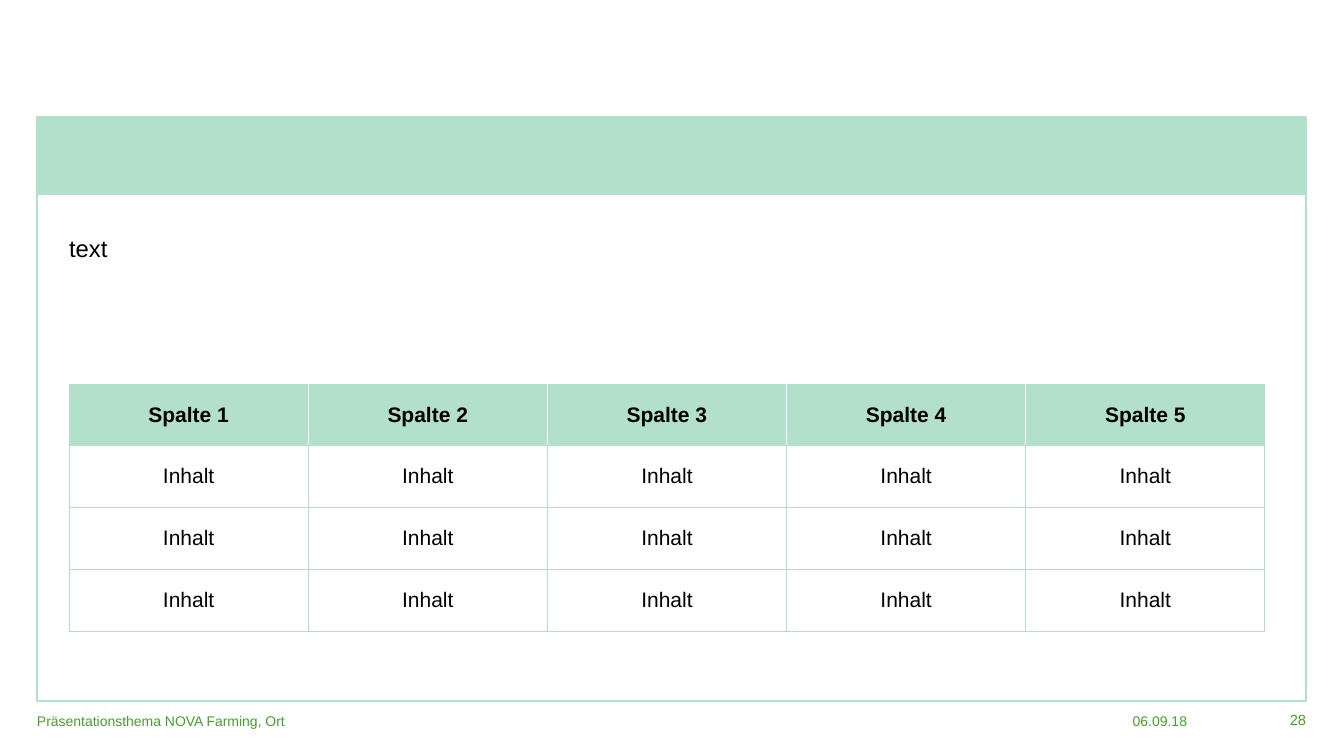
from lxml import etree
from pptx import Presentation
from pptx import util as u
from pptx.dml.color import RGBColor
from pptx.enum import shapes, text
from pptx.oxml import ns

SCALE = 12192000 / 1344
HUES = {"mint": "B3E0CB", "green": "44A12C", "black": "000000", "white": "FFFFFF"}
HEAD = [f"Spalte {n}" for n in range(1, 6)]
ROWS = [HEAD] + [["Inhalt"] * len(HEAD)] * 3
LEFT, RIGHT = text.PP_ALIGN.LEFT, text.PP_ALIGN.RIGHT


def px(n):
    return u.Emu(round(n * SCALE))


def hue(name):
    return RGBColor.from_string(HUES[name])


def style(par, size, color, align=LEFT, bold=False):
    par.alignment = align
    font = par.font
    font.name, font.size, font.bold = "Arial", u.Pt(size), bold
    font.color.rgb = hue(color)


def panel(slide, box, fill, line=None):
    shape = slide.shapes.add_shape(shapes.MSO_SHAPE.RECTANGLE, *map(px, box))
    shape.shadow.inherit = False
    shape.fill.solid()
    shape.fill.fore_color.rgb = hue(fill)
    if line:
        shape.line.color.rgb = hue(line)
        shape.line.width = u.Pt(1)
    else:
        shape.line.fill.background()


def inset(frame):
    frame.margin_left = frame.margin_right = 0
    frame.margin_top = frame.margin_bottom = 0


def label(slide, box, words, size, align=LEFT):
    frame = slide.shapes.add_textbox(*map(px, box)).text_frame
    frame.word_wrap = True
    inset(frame)
    frame.vertical_anchor = text.MSO_ANCHOR.MIDDLE
    frame.text = words
    style(frame.paragraphs[0], size, "green", align)


def body(slide, box, words):
    hold = slide.placeholders[1]
    hold.left, hold.top, hold.width, hold.height = map(px, box)
    # Bring the text in front of the panels
    hold.element.getparent().append(hold.element)
    frame = hold.text_frame
    inset(frame)
    frame.text = words
    par = frame.paragraphs[0]
    props = par._p.get_or_add_pPr()
    props.set("marL", "0")
    props.set("indent", "0")
    etree.SubElement(props, ns.qn("a:buNone"))
    par.line_spacing = 0.9
    par.space_before = u.Pt(0)
    style(par, 17, "black")


def edge(cell, side, color):
    line = etree.SubElement(cell._tc.get_or_add_tcPr(), ns.qn(f"a:ln{side}"), w=str(u.Pt(0.75)))
    fill = etree.SubElement(line, ns.qn("a:solidFill"))
    etree.SubElement(fill, ns.qn("a:srgbClr"), val=HUES[color])


def grid(slide, box, rows):
    count = len(rows[0])
    table = slide.shapes.add_table(len(rows), count, *map(px, box)).table
    for col in table.columns:
        col.width = px(box[2] / count)
    for r, row in enumerate(rows):
        table.rows[r].height = px(box[3] / len(rows))
        for c, words in enumerate(row):
            cell = table.cell(r, c)
            top = r == 0
            # Borders come before the fill in a cell
            inner = "white" if top else "mint"
            edge(cell, "L", inner if c else "mint")
            edge(cell, "R", inner if c < count - 1 else "mint")
            edge(cell, "T", "mint")
            edge(cell, "B", "mint")
            cell.fill.solid()
            cell.fill.fore_color.rgb = hue("mint" if top else "white")
            cell.margin_left = cell.margin_right = px(4)
            cell.margin_top = cell.margin_bottom = px(4)
            cell.vertical_anchor = text.MSO_ANCHOR.MIDDLE
            cell.text = words
            style(cell.text_frame.paragraphs[0], 15, "black", text.PP_ALIGN.CENTER, top)


def main():
    deck = Presentation()
    deck.slide_width, deck.slide_height = px(1344), px(756)
    slide = deck.slides.add_slide(deck.slide_layouts[1])
    title = slide.shapes.title.element
    title.getparent().remove(title)

    # Frame and header band
    panel(slide, (37, 117, 1269, 584), "white", "mint")
    panel(slide, (36, 117, 1270, 78), "mint")

    # Content
    body(slide, (69, 237, 1204, 51), "text")
    grid(slide, (69, 384, 1196, 247), ROWS)

    # Footer
    label(slide, (37, 701, 1007, 40), "Präsentationsthema NOVA Farming, Ort", 10)
    label(slide, (800, 712, 387, 17), "06.09.18", 10, RIGHT)
    label(slide, (1202, 711, 104, 18), "28", 10.5, RIGHT)
    deck.save("out.pptx")


if __name__ == "__main__":
    main()
